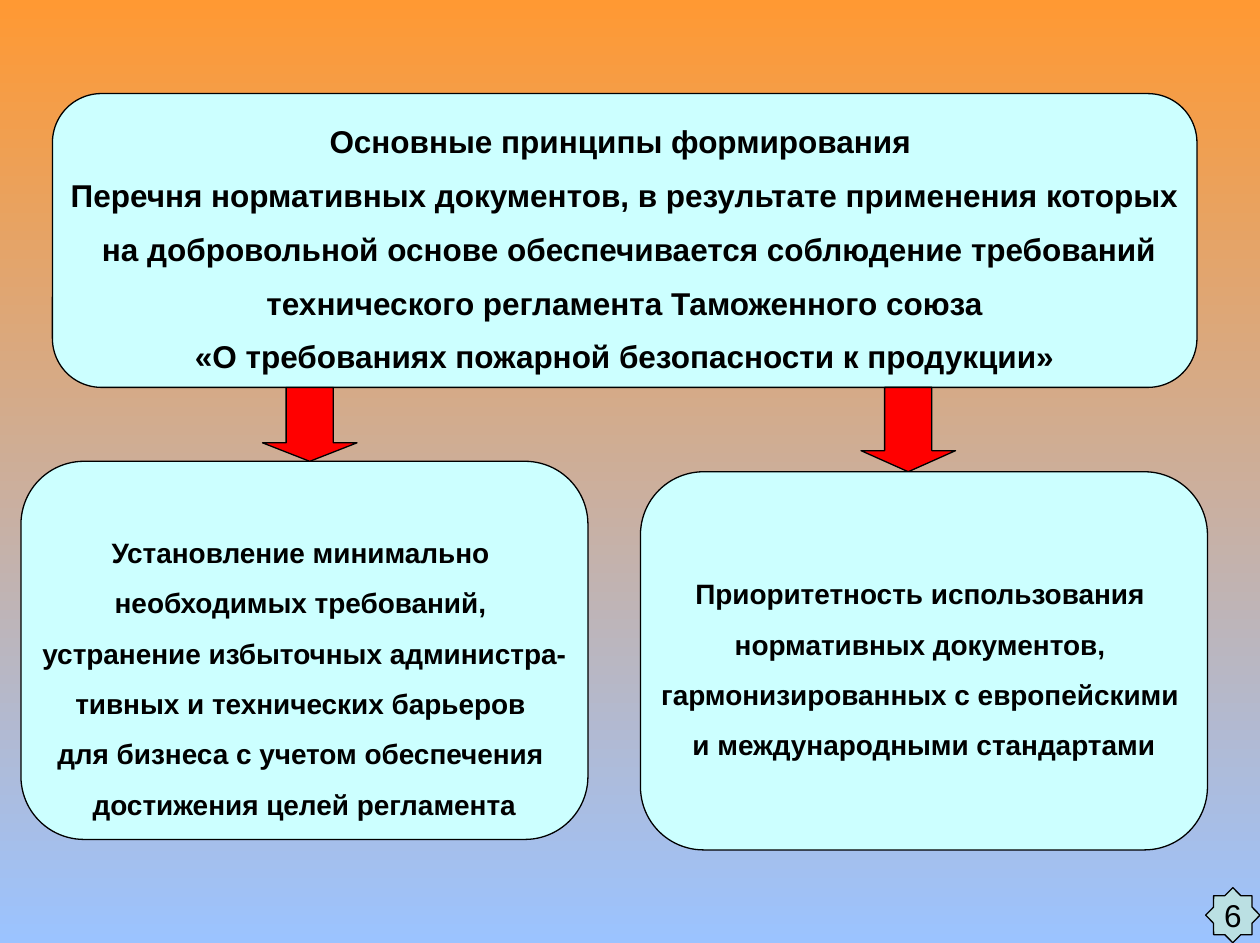
from pptx import Presentation
from pptx.dml.color import RGBColor
from pptx.enum.shapes import MSO_SHAPE as Shape
from pptx.enum.text import MSO_ANCHOR as Anchor, MSO_AUTO_SIZE as AutoSize, PP_ALIGN as Align
from pptx.util import Pt

ORANGE = RGBColor(0xFF, 0x99, 0x33)
SKY = RGBColor(0x9B, 0xC3, 0xFF)
PALE_CYAN = RGBColor(0xCC, 0xFF, 0xFF)
TEAL = RGBColor(0xBB, 0xE0, 0xE3)
RED = RGBColor(0xFF, 0x00, 0x00)
BLACK = RGBColor(0x00, 0x00, 0x00)

HEADING = [
    "Основные принципы формирования ",
    "Перечня нормативных документов, в результате применения которых",
    " на добровольной основе обеспечивается соблюдение требований",
    " технического регламента Таможенного союза ",
    "«О требованиях пожарной безопасности к продукции»",
]
MINIMAL_REQUIREMENTS = [
    "Установление минимально ",
    "необходимых требований, ",
    "устранение избыточных администра-",
    "тивных и технических барьеров ",
    "для бизнеса с учетом обеспечения ",
    "достижения целей регламента",
]
STANDARDS_PRIORITY = [
    "Приоритетность использования ",
    "нормативных документов, ",
    "гармонизированных с европейскими ",
    "и международными стандартами",
]


def write(shape, lines, size=16, bold=True, line_spacing=1.0, space_after=0,
          anchor=Anchor.MIDDLE, inset_top=0):
    frame = shape.text_frame
    frame.auto_size = AutoSize.NONE
    frame.word_wrap = False
    frame.vertical_anchor = anchor
    frame.margin_left = frame.margin_right = frame.margin_bottom = 0
    frame.margin_top = Pt(inset_top)
    frame.text = "\n".join(lines)
    for paragraph in frame.paragraphs:
        paragraph.alignment = Align.CENTER
        paragraph.line_spacing = line_spacing
        paragraph.space_after = Pt(space_after)
        font = paragraph.runs[0].font
        font.name = "Arial"
        font.size = Pt(size)
        font.bold = bold
        font.color.rgb = BLACK


def add_shape(slide, kind, left, top, width, height, color):
    shape = slide.shapes.add_shape(kind, Pt(left), Pt(top), Pt(width), Pt(height))
    shape.shadow.inherit = False
    shape.fill.solid()
    shape.fill.fore_color.rgb = color
    shape.line.color.rgb = BLACK
    shape.line.width = Pt(0.75)
    return shape


def add_box(slide, left, top, width, height, lines, **text_format):
    box = add_shape(slide, Shape.FLOWCHART_ALTERNATE_PROCESS, left, top, width, height, PALE_CYAN)
    write(box, lines, **text_format)


def add_principle(slide, left, top, lines, inset_top=0):
    add_box(slide, left, top, 324, 216, lines, line_spacing=1.5, inset_top=inset_top)


def add_arrow(slide, left, top, bottom):
    add_shape(slide, Shape.DOWN_ARROW, left, top, 54, bottom - top, RED).adjustments[1] = 0.25


def add_page_number(slide, number):
    star = add_shape(slide, Shape.STAR_8_POINT, 689, 507, 31, 31.5, TEAL)
    star.adjustments[0] = 0.383
    write(star, [number], size=18, bold=False)


def set_background(slide):
    fill = slide.background.fill
    fill.gradient()
    fill.gradient_angle = 270
    for stop, color in zip(fill.gradient_stops, (ORANGE, SKY)):
        stop.color.rgb = color


def main():
    presentation = Presentation()
    presentation.slide_width, presentation.slide_height = Pt(720), Pt(538.64)
    slide = presentation.slides.add_slide(presentation.slide_layouts[6])
    set_background(slide)

    heading_top, heading_height = 53.5, 167.8
    heading_bottom = heading_top + heading_height
    left_top, right_top = 263.5, 269.5
    add_page_number(slide, "6")
    add_principle(slide, 12, left_top, MINIMAL_REQUIREMENTS, inset_top=22)
    add_box(slide, 30, heading_top, 654, heading_height, HEADING,
            size=18, space_after=9.2, anchor=Anchor.TOP, inset_top=8)
    add_arrow(slide, 150, heading_bottom, left_top)
    add_arrow(slide, 492, heading_bottom, right_top)
    add_principle(slide, 366, right_top, STANDARDS_PRIORITY)
    presentation.save("out.pptx")


if __name__ == "__main__":
    main()
